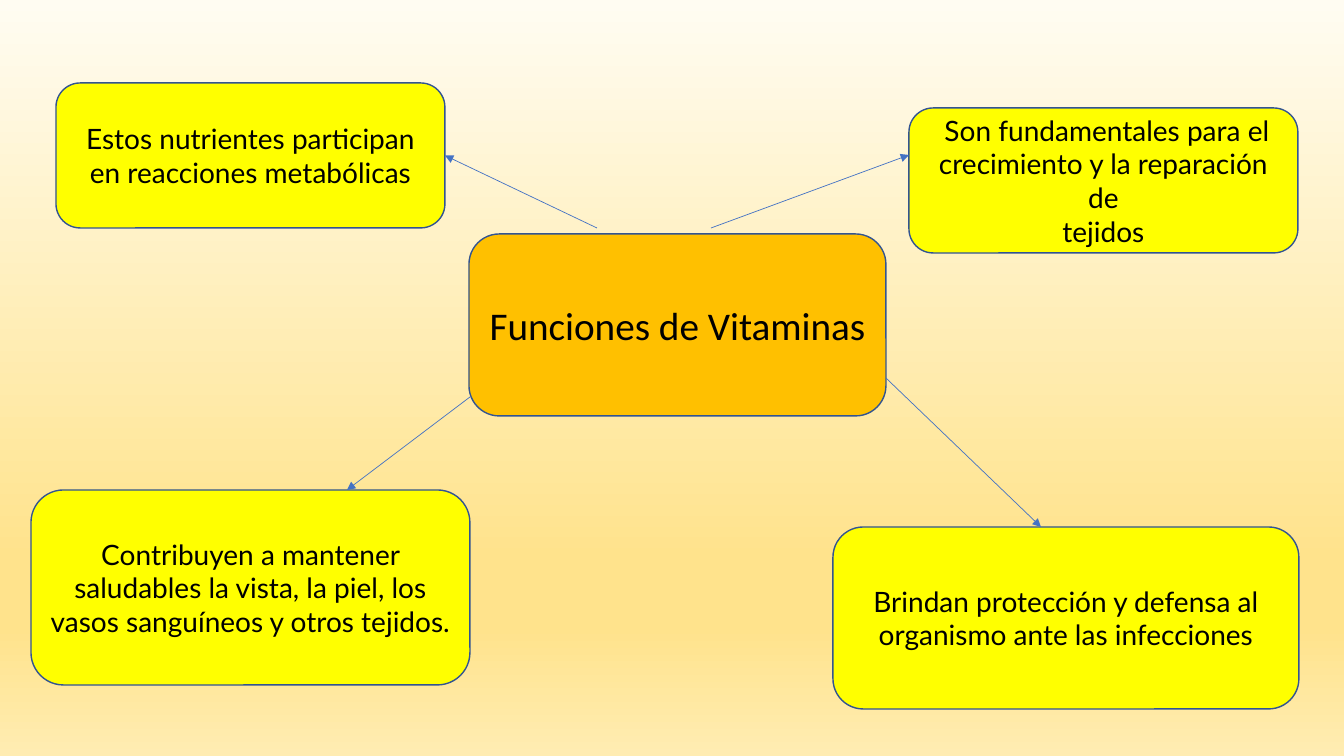
from copy import deepcopy

from lxml.etree import SubElement
from pptx import Presentation
from pptx.dml.color import RGBColor
from pptx.enum.shapes import MSO_CONNECTOR as Link, MSO_SHAPE as Shape
from pptx.enum.text import MSO_ANCHOR as Anchor, PP_ALIGN as Align
from pptx.oxml.ns import qn
from pptx.util import Inches, Pt

PX = Inches(10) / 1008


def px(*sizes):
    return [round(size * PX) for size in sizes]


def paint(color, value):
    color.rgb = RGBColor.from_string(value)


deck = Presentation()
deck.slide_width, deck.slide_height = px(1344, 756)
slide = deck.slides.add_slide(deck.slide_layouts[6])

# Background: four stops from top to bottom
stops = [(0, "FFFCF2"), (0.74, "FFE38C"), (0.83, "FFE38C"), (1, "FFECB2")]
back = slide.background.fill
back.gradient()
back.gradient_angle = 270
marks = slide.element.xpath(".//a:gsLst")[0]
while len(marks) < len(stops):
    marks.append(deepcopy(marks[0]))
for stop, (place, tone) in zip(back.gradient_stops, stops):
    stop.position = place
    paint(stop.color, tone)

# Boxes: place, fill, font, size, text
YELLOW, ORANGE = "FFFF00", "FFC000"
boxes = [
    ((56, 83, 389, 145), YELLOW, "Lato", 20,
     "Estos nutrientes participan en reacciones metabólicas"),
    ((833, 527, 466, 182), YELLOW, "Lato", 20,
     "Brindan protección y defensa al organismo ante las infecciones"),
    ((909, 108, 389, 145), YELLOW, "Lato", 20,
     " Son fundamentales para el crecimiento y la reparación de\ntejidos"),
    ((31, 490, 439, 195), YELLOW, "Lato", 20,
     "Contribuyen a mantener saludables la vista, la piel, los vasos "
     "sanguíneos y otros tejidos."),
    ((469, 234, 417, 182), ORANGE, "Calibri", 28, "Funciones de Vitaminas"),
]
nodes = []
for place, tone, face, size, text in boxes:
    box = slide.shapes.add_shape(Shape.ROUNDED_RECTANGLE, *px(*place))
    box.shadow.inherit = False
    box.fill.solid()
    paint(box.fill.fore_color, tone)
    paint(box.line.color, "325491")
    box.line.width = Pt(1)
    frame = box.text_frame
    frame.word_wrap = True
    frame.vertical_anchor = Anchor.MIDDLE
    frame.text = text
    for para in frame.paragraphs:
        para.alignment = Align.CENTER
        para.font.name = face
        para.font.size = Pt(size)
        paint(para.font.color, "000000")
    nodes.append(box)

# Arrows from the centre to each box
ends = [
    (597, 228, 445, 155),
    (711, 228, 909, 155),
    (886, 378, 1041, 527),
    (470, 397, 347, 490),
]
arrows = []
for end in ends:
    arrow = slide.shapes.add_connector(Link.STRAIGHT, *px(*end))
    paint(arrow.line.color, "4472C4")
    arrow.line.width = Pt(0.5)
    SubElement(arrow.line._get_or_add_ln(), qn("a:tailEnd"), type="triangle")
    SubElement(arrow.element.spPr, qn("a:effectLst"))
    arrows.append(arrow)
arrows[0].end_connect(nodes[0], 3)

deck.save("out.pptx")
